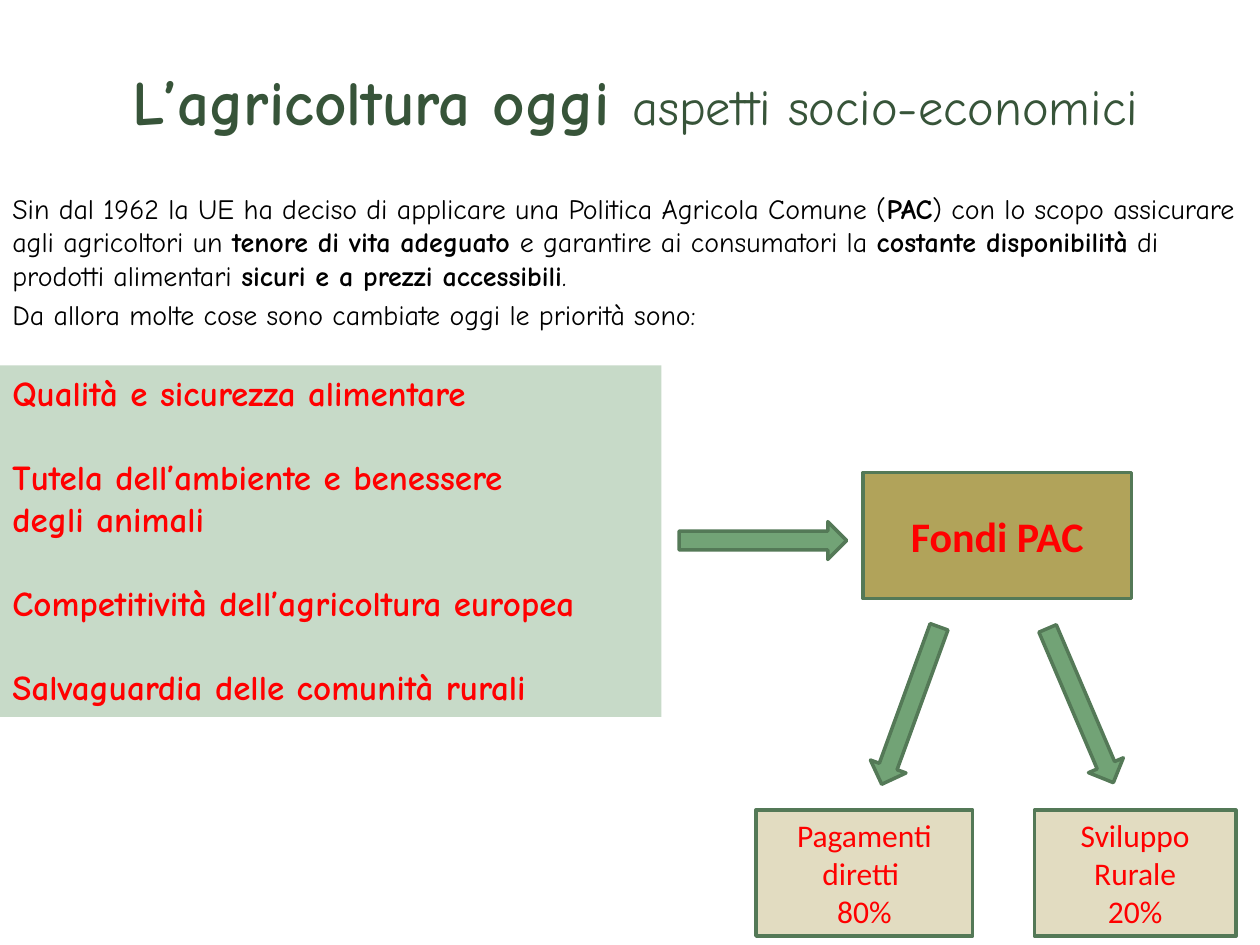
from pptx import Presentation
from pptx.dml.color import RGBColor
from pptx.enum.shapes import MSO_SHAPE as Shape
from pptx.enum.text import MSO_ANCHOR as Anchor, MSO_AUTO_SIZE as AutoSize, PP_ALIGN as Align
from pptx.util import Inches, Pt

DARK_GREEN = RGBColor(0x37, 0x54, 0x39)
LINE_GREEN = RGBColor(0x54, 0x79, 0x57)
ARROW_GREEN = RGBColor(0x72, 0xA3, 0x76)
PALE_GREEN = RGBColor(0xC7, 0xDA, 0xC8)
OCHRE = RGBColor(0xB1, 0xA3, 0x5A)
SAND = RGBColor(0xE2, 0xDC, 0xC1)
RED = RGBColor(0xFF, 0x00, 0x00)
BLACK = RGBColor(0x00, 0x00, 0x00)
HAND_FONT = "Comic Neue"
BOX_FONT = "Calibri"

prs = Presentation()
prs.slide_width, prs.slide_height = Inches(10), Inches(7.5)
slide = prs.slides.add_slide(prs.slide_layouts[5])


def style(paragraph, font_name, size, color, bold=None):
    font = paragraph.font
    font.name, font.size, font.bold = font_name, Pt(size), bold
    font.color.rgb = color


def add_block(kind, left, top, width, height, fill, outlined=True):
    block = slide.shapes.add_shape(kind, Inches(left), Inches(top), Inches(width), Inches(height))
    block.shadow.inherit = False
    block.fill.solid()
    block.fill.fore_color.rgb = fill
    if outlined:
        block.line.color.rgb = LINE_GREEN
        block.line.width = Pt(2)
    else:
        block.line.fill.background()
    return block


# Title
title = slide.shapes.title
title.left, title.top = Inches(0.35), Inches(0.29)
title.width, title.height = Inches(9.38), Inches(1.01)
title.text_frame.auto_size = AutoSize.NONE
title.text_frame.vertical_anchor = Anchor.MIDDLE
heading = title.text_frame.paragraphs[0]
heading.alignment = Align.CENTER
style(heading, HAND_FONT, 36, DARK_GREEN)
for text, size, bold in [("L’agricoltura oggi ", 36, True),
                         ("aspetti socio-economici", 28.8, False)]:
    run = heading.add_run()
    run.text, run.font.size, run.font.bold = text, Pt(size), bold

# Introduction: runs alternate between regular and bold
INTRO = [
    ["Sin dal 1962 la UE ha deciso di applicare una Politica Agricola Comune (", "PAC",
     ") con lo scopo assicurare agli agricoltori un ", "tenore di vita adeguato ",
     "e garantire ai consumatori la ", "costante disponibilità",
     " di prodotti alimentari ", "sicuri e a prezzi accessibili", "."],
    ["Da allora molte cose sono cambiate oggi le priorità sono:"],
]
intro = slide.shapes.add_textbox(0, Inches(1.47), Inches(10), Inches(1.21)).text_frame
intro.word_wrap = True
for i, pieces in enumerate(INTRO):
    paragraph = intro.add_paragraph() if i else intro.paragraphs[0]
    paragraph.space_before = Pt(3.2)
    style(paragraph, HAND_FONT, 16, BLACK)
    for j, text in enumerate(pieces):
        run = paragraph.add_run()
        run.text, run.font.bold = text, j % 2 == 1

# Priorities, one line apart; the second one runs over two lines
PRIORITIES = [
    ("Qualità e sicurezza alimentare", 0),
    ("Tutela dell’ambiente e benessere", 24),
    ("degli animali", 0),
    ("Competitività dell’agricoltura europea", 24),
    ("Salvaguardia delle comunità rurali", 24),
]
priorities = add_block(Shape.RECTANGLE, 0, 2.9, 5.25, 2.79, PALE_GREEN, outlined=False).text_frame
priorities.word_wrap = True
priorities.vertical_anchor = Anchor.TOP
priorities.text = "\n".join(text for text, gap in PRIORITIES)
for paragraph, (text, gap) in zip(priorities.paragraphs, PRIORITIES):
    paragraph.alignment = Align.LEFT
    paragraph.space_before = Pt(gap)
    style(paragraph, HAND_FONT, 20, RED, True)

# Funds and the two ways they are spent
BOXES = [
    ("Fondi PAC", 6.85, 3.75, 2.13, OCHRE, 24, True),
    ("Pagamenti diretti \n80%", 6, 6.43, 1.72, SAND, 18, False),
    ("Sviluppo\nRurale\n20%", 8.21, 6.43, 1.6, SAND, 18, False),
]
for text, left, top, width, fill, size, bold in BOXES:
    box = add_block(Shape.RECTANGLE, left, top, width, 1, fill).text_frame
    box.word_wrap = True
    box.vertical_anchor = Anchor.MIDDLE
    box.text = text
    for paragraph in box.paragraphs:
        paragraph.alignment = Align.CENTER
        style(paragraph, BOX_FONT, size, RED, bold)

# Arrows: priorities to funds, funds to each spending box
for left, top, angle in [(5.39, 4.14, 0), (6.56, 5.45, 110), (7.91, 5.45, 66.9)]:
    add_block(Shape.RIGHT_ARROW, left, top, 1.33, 0.3, ARROW_GREEN).rotation = angle

prs.save("out.pptx")
